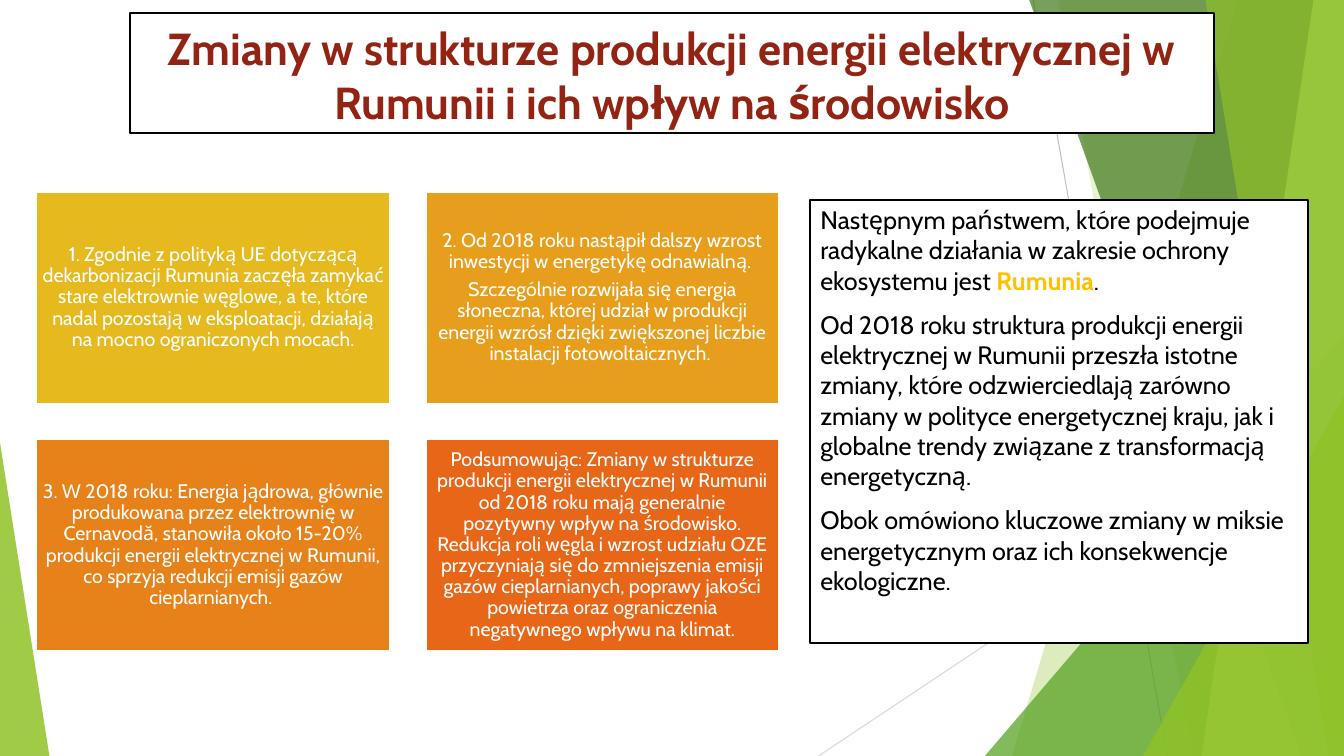
import pptx
import pptx.util
import pptx.dml.color
import pptx.enum.shapes
import pptx.enum.text
import pptx.oxml.ns
import lxml.etree

Pt = pptx.util.Pt
SHAPE = pptx.enum.shapes.MSO_SHAPE
ALIGN = pptx.enum.text.PP_ALIGN
ANCHOR = pptx.enum.text.MSO_ANCHOR
WIDE, HIGH = pptx.util.Inches(13.333), pptx.util.Inches(7.5)
FONT = "Cabin"

# Backdrop, in percent of the slide: (left at top, left at foot, colour, opacity)
BANDS_LOW = [(92.1, 75.3, "90C226", 30), (78.75, 88.73, "90C226", 20)]
BANDS_TOP = [(76.58, 96.83, "3F7819", 70), (97.73, 89.4, "C0E474", 70),
             (89.7, 98.85, "90C226", 65)]
RAYS = [(76.88, 0, 86.85, 100, "BFBFBF"), (100, 53.73, 60.9, 100, "D9D9D9")]

TITLE = "Zmiany w strukturze produkcji energii elektrycznej w Rumunii i ich wpływ na środowisko"
INTRO = [
    [("Następnym państwem, które podejmuje radykalne działania w zakresie ochrony "
      "ekosystemu jest ", False), ("Rumunia", True), (".", False)],
    [("Od 2018 roku struktura produkcji energii elektrycznej w Rumunii przeszła istotne "
      "zmiany, które odzwierciedlają zarówno zmiany w polityce energetycznej kraju, jak i "
      "globalne trendy związane z transformacją energetyczną.", False)],
    [("Obok omówiono kluczowe zmiany w miksie energetycznym oraz ich konsekwencje "
      "ekologiczne.", False)],
]
CARDS = [
    ("E6B91E", ["1. Zgodnie z polityką UE dotyczącą dekarbonizacji Rumunia zaczęła zamykać "
                "stare elektrownie węglowe, a te, które nadal pozostają w eksploatacji, "
                "działają na mocno ograniczonych mocach."]),
    ("E69E1C", ["2. Od 2018 roku nastąpił dalszy wzrost inwestycji w energetykę odnawialną. ",
                "Szczególnie rozwijała się energia słoneczna, której udział w produkcji "
                "energii wzrósł dzięki zwiększonej liczbie instalacji fotowoltaicznych. "]),
    ("E7821A", ["3. W 2018 roku: Energia jądrowa, głównie produkowana przez elektrownię w "
                "Cernavodă, stanowiła około 15-20% produkcji energii elektrycznej w "
                "Rumunii, co sprzyja redukcji emisji gazów cieplarnianych. "]),
    ("E76618", ["Podsumowując: Zmiany w strukturze produkcji energii elektrycznej w Rumunii "
                "od 2018 roku mają generalnie pozytywny wpływ na środowisko. Redukcja roli "
                "węgla i wzrost udziału OZE przyczyniają się do zmniejszenia emisji gazów "
                "cieplarnianych, poprawy jakości powietrza oraz ograniczenia negatywnego "
                "wpływu na klimat."]),
]


def color(code):
    return pptx.dml.color.RGBColor.from_string(code)


def area(left, top, width, height):
    """Turn percent of the slide into lengths."""
    return (int(WIDE * left / 100), int(HIGH * top / 100),
            int(WIDE * width / 100), int(HIGH * height / 100))


def paint(shape, fill, edge=None, alpha=100):
    shape.shadow.inherit = False
    shape.fill.solid()
    shape.fill.fore_color.rgb = color(fill)
    if alpha < 100:
        tint = shape.element.xpath(".//a:solidFill/a:srgbClr")[0]
        lxml.etree.SubElement(tint, pptx.oxml.ns.qn("a:alpha"), val=str(alpha * 1000))
    if edge:
        shape.line.color.rgb = color(edge)
        shape.line.width = Pt(1.5)
    else:
        shape.line.fill.background()


def panel(slide, box, fill, edge, anchor):
    shape = slide.shapes.add_shape(SHAPE.RECTANGLE, *box)
    paint(shape, fill, edge)
    shape.text_frame.word_wrap = True
    shape.text_frame.vertical_anchor = anchor
    return shape.text_frame


def write(para, size, tone, align):
    para.alignment = align
    para.font.name = FONT
    para.font.size = Pt(size)
    para.font.color.rgb = color(tone)


def lines(frame, count):
    """Return the given number of paragraphs of a frame."""
    return [frame.paragraphs[0]] + [frame.add_paragraph() for _ in range(count - 1)]


def draw_band(slide, head, foot, fill, alpha):
    pen = slide.shapes.build_freeform(*area(head, 0, 0, 0)[:2])
    ends = [(100, 0), (100, 100), (foot, 100)]
    pen.add_line_segments([area(x, y, 0, 0)[:2] for x, y in ends])
    paint(pen.convert_to_shape(), fill, alpha=alpha)


def draw_wedge(slide, box, tip, fill, alpha):
    wedge = slide.shapes.add_shape(SHAPE.ISOSCELES_TRIANGLE, *box)
    wedge.adjustments[0] = tip
    paint(wedge, fill, alpha=alpha)


def draw_back(slide):
    for x1, y1, x2, y2, tone in RAYS:
        ray = slide.shapes.add_connector(
            pptx.enum.shapes.MSO_CONNECTOR.STRAIGHT, *area(x1, y1, x2, y2))
        ray.line.color.rgb = color(tone)
        ray.line.width = Pt(0.75)
        lxml.etree.SubElement(ray.element.spPr, pptx.oxml.ns.qn("a:effectLst"))
    for band in BANDS_LOW:
        draw_band(slide, *band)
    draw_wedge(slide, area(73.28, 44.4, 26.72, 55.6), 1, "54A021", 72)
    for band in BANDS_TOP:
        draw_band(slide, *band)
    draw_wedge(slide, area(85.05, 52.4, 14.95, 47.6), 1, "90C226", 80)
    draw_wedge(slide, area(0, 58.53, 3.68, 41.47), 0, "90C226", 85)


def draw_title(slide, box):
    para = panel(slide, box, "FFFFFF", "000000", ANCHOR.BOTTOM).paragraphs[0]
    para.text = TITLE
    write(para, 32, "932313", ALIGN.CENTER)
    para.font.bold = True


def draw_intro(slide, box):
    frame = panel(slide, box, "FFFFFF", "000000", ANCHOR.TOP)
    for row, (para, parts) in enumerate(zip(lines(frame, len(INTRO)), INTRO)):
        write(para, 18, "000000", ALIGN.LEFT)
        para.space_before = Pt(10 if row else 0)
        for text, key in parts:
            run = para.add_run()
            run.text = text
            if key:
                run.font.bold = True
                run.font.color.rgb = color("FFC000")


def draw_cards(slide, box):
    left, top, width, height = box
    wide = int(width / 2.1)  # two columns with a gap of a tenth of a card
    gap = width - 2 * wide
    high = (height - gap) // 2
    for spot, (fill, texts) in enumerate(CARDS):
        row, col = divmod(spot, 2)
        place = (left + col * (wide + gap), top + row * (high + gap), wide, high)
        frame = panel(slide, place, fill, "FFFFFF", ANCHOR.MIDDLE)
        frame.margin_left = frame.margin_right = Pt(4.2)
        frame.margin_top = frame.margin_bottom = Pt(4.2)
        for para, text in zip(lines(frame, len(texts)), texts):
            para.text = text
            write(para, 14, "FFFFFF", ALIGN.CENTER)
            para.line_spacing = 0.9
            para.space_after = Pt(5)


def main():
    deck = pptx.Presentation()
    deck.slide_width, deck.slide_height = WIDE, HIGH
    slide = deck.slides.add_slide(deck.slide_layouts[6])
    draw_back(slide)
    draw_title(slide, area(9.68, 1.73, 80.63, 15.87))
    draw_intro(slide, area(60.3, 26.4, 37.05, 58.67))
    draw_cards(slide, area(2.7, 25.33, 55.28, 60.8))
    deck.save("out.pptx")


if __name__ == "__main__":
    main()
